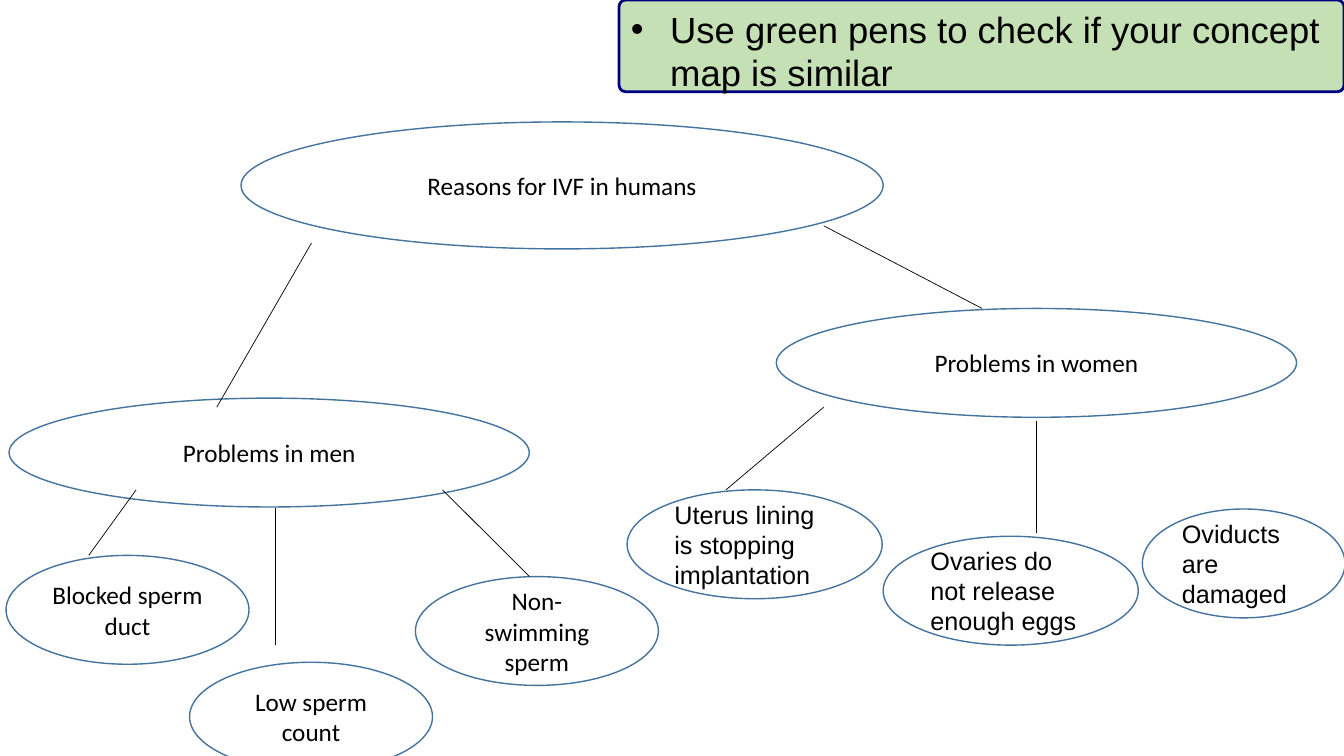
from dataclasses import dataclass

from lxml import etree
from pptx import Presentation
from pptx.dml.color import RGBColor
from pptx.enum.shapes import MSO_CONNECTOR as Connector, MSO_SHAPE as Shape
from pptx.enum.text import MSO_ANCHOR as Anchor, PP_ALIGN as Align
from pptx.oxml.ns import qn
from pptx.util import Inches, Pt


@dataclass(frozen=True)
class Theme:
    ink: str = "000000"
    banner_fill: str = "C5E0B4"
    banner_line: str = "000080"
    bubble_line: str = "43739E"
    banner_size: int = 26
    bubble_size: int = 18
    body_font: str = "Calibri"
    plain_font: str = "Arial"


def write(box, text, *, font, size, color, align=Align.LEFT, anchor=Anchor.MIDDLE):
    frame = box.text_frame
    frame.word_wrap = True
    frame.vertical_anchor = anchor
    para = frame.paragraphs[0]
    para.alignment = align
    span = para.add_run()
    span.text = text
    span.font.name = font
    span.font.size = Pt(size)
    span.font.color.rgb = RGBColor.from_string(color)
    return para


def add_bullet(para, indent):
    """Give the paragraph a round bullet with a hanging indent."""
    settings = para._p.get_or_add_pPr()
    settings.set("marL", str(indent))
    settings.set("indent", str(-indent))
    etree.SubElement(settings, qn("a:buFont")).set("typeface", "Arial")
    etree.SubElement(settings, qn("a:buChar")).set("char", "•")


class ConceptMap:
    def __init__(self, slide, theme):
        self.slide = slide
        self.theme = theme

    def outline(self, kind, place, color, width):
        """Add an unfilled preset shape at (left, top, width, height)."""
        box = self.slide.shapes.add_shape(kind, *map(Inches, place))
        box.shadow.inherit = False
        box.fill.background()
        box.line.color.rgb = RGBColor.from_string(color)
        box.line.width = Pt(width)
        return box

    def banner(self, text, place):
        theme = self.theme
        box = self.outline(Shape.ROUNDED_RECTANGLE, place, theme.banner_line, 2)
        box.adjustments[0] = 0.07
        box.fill.solid()
        box.fill.fore_color.rgb = RGBColor.from_string(theme.banner_fill)
        para = write(box, text, font=theme.plain_font, size=theme.banner_size,
                     color=theme.ink, anchor=Anchor.TOP)
        add_bullet(para, Inches(0.39))

    def bubble(self, text, place, **text_format):
        theme = self.theme
        box = self.outline(Shape.OVAL, place, theme.bubble_line, 1)
        style = dict(font=theme.body_font, align=Align.CENTER) | text_format
        write(box, text, size=theme.bubble_size, color=theme.ink, **style)

    def branch(self, start, end):
        line = self.slide.shapes.add_connector(
            Connector.STRAIGHT, *map(Inches, start + end))
        line.line.color.rgb = RGBColor.from_string(self.theme.ink)
        line.line.width = Pt(0.5)
        etree.SubElement(line._element.spPr, qn("a:effectLst"))


BUBBLE_HEIGHT = 1.08
GROUP_WIDTH = 5.16
MEN_WIDTH = 2.41

GROUPS = [
    ("Problems in men", 0.09, 3.95),
    ("Problems in women", 7.7, 3.06),
]
MEN_REASONS = [
    ("Blocked sperm duct", 0.06, 5.51),
    ("Low sperm count", 1.88, 6.57),
    ("Non- swimming sperm", 4.12, 5.72),
]
WOMEN_REASONS = [
    ("Uterus lining is stopping implantation", 6.22, 4.86, 2.53),
    ("Ovaries do not release enough eggs", 8.76, 5.32, 2.53),
    ("Oviducts are damaged", 11.33, 5.05, 2.01),
]
BRANCHES = [
    ((3.09, 2.41), (2.15, 4.04)),
    ((8.17, 2.24), (9.74, 3.06)),
    ((1.35, 4.86), (0.88, 5.51)),
    ((2.73, 5.04), (2.73, 6.4)),
    ((4.39, 4.86), (5.25, 5.72)),
    ((8.17, 4.04), (7.2, 4.86)),
    ((10.28, 4.18), (10.28, 5.29)),
]


def main():
    deck = Presentation()
    deck.slide_width, deck.slide_height = Inches(13.33), Inches(7.5)
    page = deck.slides.add_slide(deck.slide_layouts[6])
    theme = Theme()
    concept_map = ConceptMap(page, theme)

    concept_map.banner("Use green pens to check if your concept map is similar",
                       (6.14, 0, 7.19, 0.91))
    concept_map.bubble("Reasons for IVF in humans", (2.39, 1.21, 6.37, 1.26))
    for text, left, top in GROUPS:
        concept_map.bubble(text, (left, top, GROUP_WIDTH, BUBBLE_HEIGHT))
    for text, left, top in MEN_REASONS:
        concept_map.bubble(text, (left, top, MEN_WIDTH, BUBBLE_HEIGHT))
    for text, left, top, width in WOMEN_REASONS:
        concept_map.bubble(text, (left, top, width, BUBBLE_HEIGHT),
                           font=theme.plain_font, align=Align.LEFT)
    for start, end in BRANCHES:
        concept_map.branch(start, end)

    deck.save("out.pptx")


if __name__ == "__main__":
    main()
